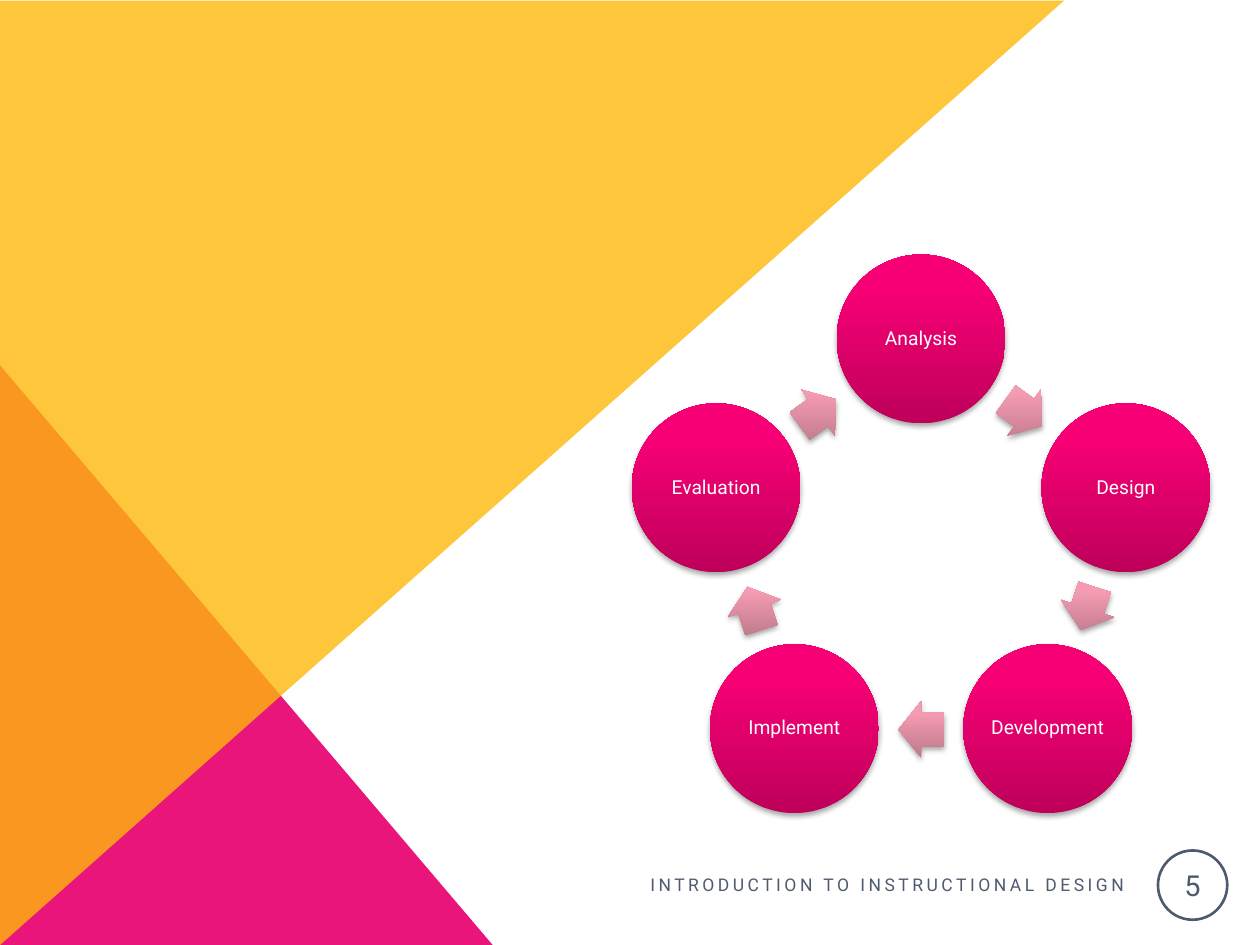
"""Build a slide showing the five-stage instructional design cycle."""
from math import cos, radians, sin

from lxml import etree
from pptx import Presentation
from pptx.dml.color import RGBColor
from pptx.enum import shapes, text
from pptx.oxml import parse_xml
from pptx.oxml.ns import nsdecls, qn
from pptx.util import Inches, Pt

STAGES = ["Analysis", "Design", "Development", "Implement", "Evaluation"]
FOOTER = "INTRODUCTION TO INSTRUCTIONAL DESIGN"
PAGE = "5"
FONT = "Roboto"
COLORS = {"pink": "EA157A", "yellow": "FEB80A", "slate": "4E5B6F",
          "white": "FFFFFF", "black": "000000"}
STAGE_STOPS = [(0, "BE005A"), (80, "F70075"), (100, "F80076")]
ARROW_STOPS = [(0, "BD788A"), (80, "F59CB3"), (100, "F89BB4")]

CENTER_X, CENTER_Y = 7.31, 4.4
STAGE_RADIUS, ARROW_RADIUS = 1.71, 1.39
STAGE_SIZE = 1.34
ARROW_W, ARROW_H = 0.36, 0.45
STEP = 360 / len(STAGES)


def rgb(name):
    return RGBColor.from_string(COLORS[name])


def add_shape(parent, kind, x, y, w, h, fill=None):
    sp = parent.add_shape(kind, Inches(x), Inches(y), Inches(w), Inches(h))
    sp.shadow.inherit = False
    sp.line.fill.background()
    if fill:
        sp.fill.solid()
        sp.fill.fore_color.rgb = rgb(fill)
    else:
        sp.fill.background()
    return sp


def write(sp, words, size, color, align, inset=None):
    tf = sp.text_frame
    tf.vertical_anchor = text.MSO_ANCHOR.MIDDLE
    if inset is not None:
        tf.margin_left = tf.margin_right = Inches(inset)
        tf.margin_top = tf.margin_bottom = Inches(inset)
    p = tf.paragraphs[0]
    p.text = words
    p.alignment = align
    p.font.name = FONT
    p.font.size = Pt(size)
    p.font.color.rgb = rgb(color)
    return p


def add_glossy(parent, kind, angle, radius, w, h, stops):
    x = CENTER_X + radius * sin(radians(angle)) - w / 2
    y = CENTER_Y - radius * cos(radians(angle)) - h / 2
    sp = add_shape(parent, kind, x, y, w, h)
    props = sp._element.spPr
    marks = "".join(f'<a:gs pos="{pos * 1000}"><a:srgbClr val="{color}"/></a:gs>'
                    for pos, color in stops)
    gradient = parse_xml(
        f'<a:gradFill {nsdecls("a")} rotWithShape="0"><a:gsLst>{marks}</a:gsLst>'
        '<a:lin ang="16200000" scaled="0"/></a:gradFill>')
    props.replace(props.find(qn("a:noFill")), gradient)
    props.find(qn("a:effectLst")).append(parse_xml(
        f'<a:outerShdw {nsdecls("a")} blurRad="{Pt(3.1)}" dist="{Pt(1.8)}" '
        f'dir="5400000" rotWithShape="0"><a:srgbClr val="{COLORS["black"]}">'
        '<a:alpha val="35000"/></a:srgbClr></a:outerShdw>'))
    return sp


def add_background(s):
    kind = shapes.MSO_SHAPE.RIGHT_TRIANGLE
    add_shape(s.shapes, kind, 0, 2.9, 3.91, 4.6, "pink")
    sp = add_shape(s.shapes, kind, 0.47, -0.47, 7.5, 8.45, "yellow")
    sp.rotation = 90
    color = sp._element.spPr.find(qn("a:solidFill"))[0]
    etree.SubElement(color, qn("a:alpha")).set("val", "80000")


def add_footer(s):
    box = s.shapes.add_textbox(Inches(3.85), Inches(6.87), Inches(5.17), Inches(0.3))
    box.text_frame.word_wrap = True
    p = write(box, FOOTER, 10, "slate", text.PP_ALIGN.RIGHT)
    p.runs[0].font._element.set("spc", "200")
    badge = add_shape(s.shapes, shapes.MSO_SHAPE.OVAL, 9.19, 6.75, 0.55, 0.55)
    badge.line.color.rgb = rgb("slate")
    badge.line.width = Pt(1.5)
    write(badge, PAGE, 16.5, "slate", text.PP_ALIGN.CENTER, 0.01)


def add_cycle(s):
    cycle = s.shapes.add_group_shape().shapes
    for i, stage in enumerate(STAGES):
        angle = i * STEP
        circle = add_glossy(cycle, shapes.MSO_SHAPE.OVAL, angle, STAGE_RADIUS,
                            STAGE_SIZE, STAGE_SIZE, STAGE_STOPS)
        p = write(circle, stage, 11, "white", text.PP_ALIGN.CENTER, 0.02)
        p.line_spacing = 0.9
        circle.text_frame.word_wrap = False
        turn = angle + STEP / 2
        arrow = add_glossy(cycle, shapes.MSO_SHAPE.RIGHT_ARROW, turn, ARROW_RADIUS,
                           ARROW_W, ARROW_H, ARROW_STOPS)
        arrow.adjustments[0] = 0.6
        arrow.adjustments[1] = 0.5
        arrow.rotation = turn


def main():
    prs = Presentation()
    prs.slide_width, prs.slide_height = Inches(10), Inches(7.5)
    s = prs.slides.add_slide(prs.slide_layouts[6])
    add_background(s)
    add_footer(s)
    add_cycle(s)
    prs.save("out.pptx")


if __name__ == "__main__":
    main()
